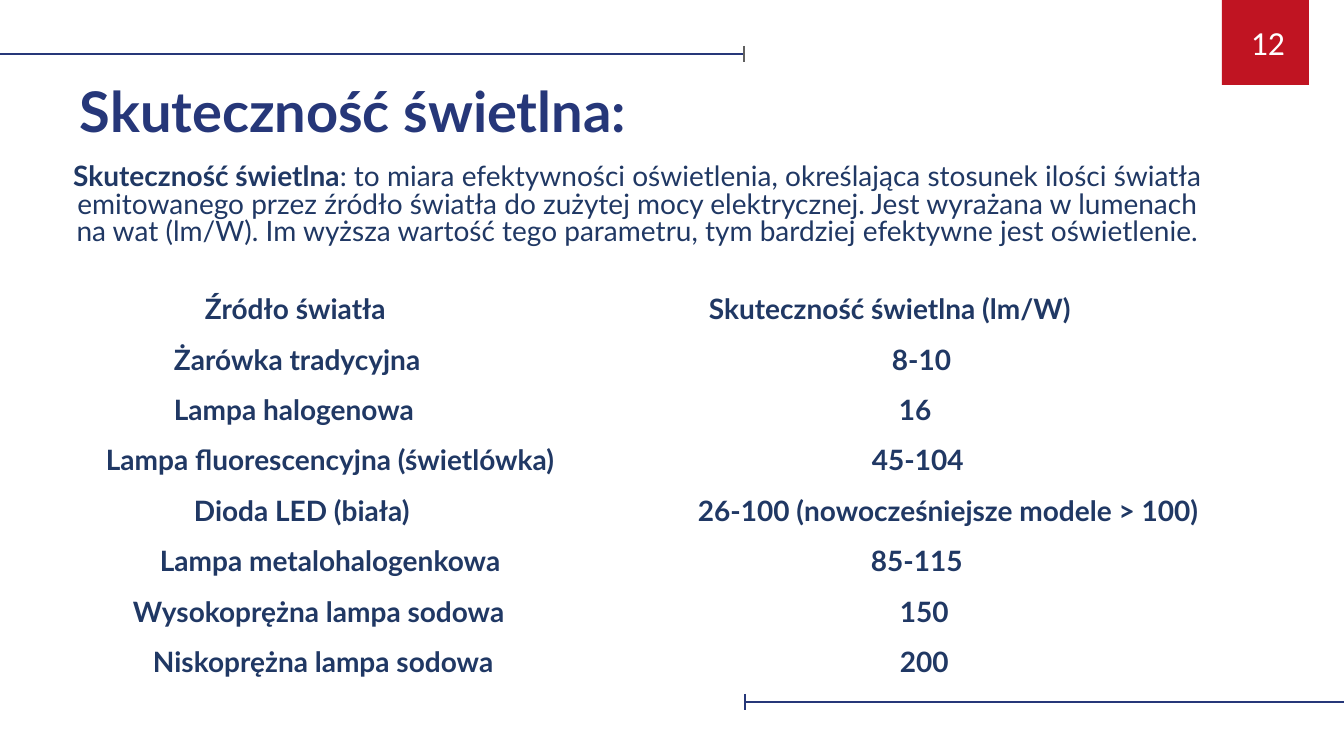
from lxml.etree import SubElement
from pptx import Presentation
from pptx.dml.color import RGBColor
from pptx.enum.shapes import MSO_CONNECTOR, MSO_SHAPE
from pptx.enum.text import MSO_AUTO_SIZE, PP_ALIGN
from pptx.oxml.ns import qn
from pptx.util import Pt

EMU_PER_PX = 914400 / 100.8
COLORS = {
    "navy": "263779",
    "text": "203864",
    "gray": "606060",
    "red": "C01422",
    "white": "FFFFFF",
}
DEFINITION = (
    ": to miara efektywności oświetlenia, określająca stosunek ilości światła "
    "emitowanego przez źródło światła do zużytej mocy elektrycznej. Jest wyrażana "
    "w lumenach na wat (lm/W). Im wyższa wartość tego parametru, tym bardziej "
    "efektywne jest oświetlenie."
)
LAMP_ROWS = [
    (141, "Źródło światła", 645, "Skuteczność świetlna (lm/W)"),
    (110, "Żarówka tradycyjna", 828, "8-10"),
    (110, "Lampa halogenowa", 835, "16"),
    (42, "Lampa fluorescencyjna (świetlówka)", 808, "45-104"),
    (130, "Dioda LED (biała)", 634, "26-100 (nowocześniejsze modele > 100)"),
    (96, "Lampa metalohalogenkowa", 807, "85-115"),
    (69, "Wysokoprężna lampa sodowa", 836, "150"),
    (89, "Niskoprężna lampa sodowa", 836, "200"),
]


def px(length):
    return round(length * EMU_PER_PX)


def color(name):
    return RGBColor.from_string(COLORS[name])


def add_line(slide, start, end, color_name):
    line = slide.shapes.add_connector(
        MSO_CONNECTOR.STRAIGHT, *(px(value) for value in (*start, *end))
    )
    line.line.color.rgb = color(color_name)
    line.line.width = Pt(1.5)
    SubElement(line._element.spPr, qn("a:effectLst"))


def add_text_frame(slide, box):
    shape = slide.shapes.add_textbox(*(px(value) for value in box))
    shape.text_frame.word_wrap = True
    shape.text_frame.auto_size = MSO_AUTO_SIZE.SHAPE_TO_FIT_TEXT
    return shape.text_frame


def add_run(paragraph, text, size, color_name, bold=False, font="Lato"):
    run = paragraph.add_run()
    run.text = text
    run.font.name = font
    run.font.size = Pt(size)
    run.font.bold = bold
    run.font.color.rgb = color(color_name)


def add_rule(slide, box, tick_x, tick_color):
    left, top, width, height = box
    middle = top + height // 2
    add_line(slide, (left, middle), (left + width, middle), "navy")
    add_line(slide, (tick_x, top), (tick_x, top + height), tick_color)


def add_page_badge(slide, box, number):
    left, top, width, height = box
    badge = slide.shapes.add_shape(
        MSO_SHAPE.RECTANGLE, *(px(value) for value in box)
    )
    badge.shadow.inherit = False
    badge.fill.solid()
    badge.fill.fore_color.rgb = color("red")
    badge.line.fill.background()
    frame = add_text_frame(slide, (left + 19, top + 17, width - 29, height - 35))
    add_run(frame.paragraphs[0], number, 24, "white", font="Calibri")


def add_title(slide, box, title):
    paragraph = add_text_frame(slide, box).paragraphs[0]
    add_run(paragraph, title, 40, "navy", bold=True)


def add_definition(slide, box, term, explanation):
    paragraph = add_text_frame(slide, box).paragraphs[0]
    paragraph.alignment = PP_ALIGN.CENTER
    paragraph.line_spacing = Pt(19.6)
    add_run(paragraph, term, 20, "text", bold=True)
    add_run(paragraph, explanation, 20, "text")


def add_tab_stops(paragraph, positions):
    tab_list = SubElement(paragraph._p.get_or_add_pPr(), qn("a:tabLst"))
    for position in positions:
        SubElement(tab_list, qn("a:tab"), pos=str(px(position)), algn="l")


def add_lamp_list(slide, box, rows):
    frame = add_text_frame(slide, box)
    for index, (name_x, name, value_x, value) in enumerate(rows):
        paragraph = frame.add_paragraph() if index else frame.paragraphs[0]
        paragraph.line_spacing = 1.5
        add_tab_stops(paragraph, (name_x, value_x))
        add_run(paragraph, f"\t{name}\t{value}", 20, "text", bold=True)


def main():
    presentation = Presentation()
    presentation.slide_width = px(1344)
    presentation.slide_height = px(756)
    slide = presentation.slides.add_slide(presentation.slide_layouts[6])
    add_rule(slide, (0, 46, 744, 16), 744, "gray")
    add_title(slide, (70, 72, 950, 78), "Skuteczność świetlna:")
    add_rule(slide, (745, 694, 599, 16), 745, "navy")
    add_page_badge(slide, (1222, 0, 87, 85), "12")
    add_definition(slide, (54, 160, 1167, 95), "Skuteczność świetlna", DEFINITION)
    add_lamp_list(slide, (54, 270, 1167, 410), LAMP_ROWS)
    presentation.save("out.pptx")


if __name__ == "__main__":
    main()
